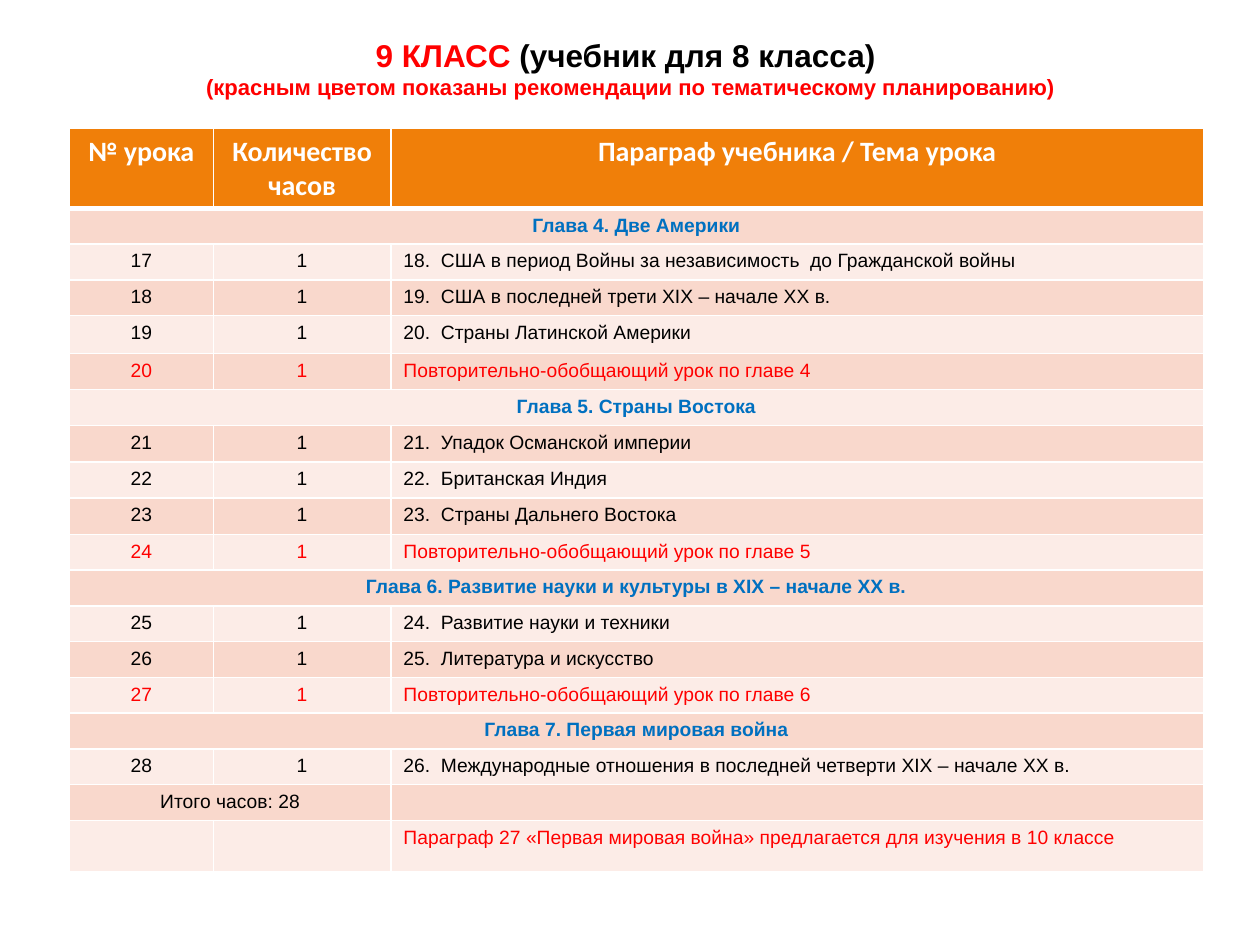
import lxml.etree
import pptx
import pptx.util
import pptx.dml.color
import pptx.enum.text
import pptx.oxml.ns

Cm = pptx.util.Cm
Pt = pptx.util.Pt
ALIGN = pptx.enum.text.PP_ALIGN

COLORS = {
    "red": "FF0000", "black": "000000", "white": "FFFFFF", "blue": "0070C0",
    "header": "F07F09", "dark_band": "F9D8CC", "light_band": "FCECE7",
}
TITLE = [
    ("9 КЛАСС ", 18, "red"),
    ("(учебник для 8 класса) ", 18, "black"),
    ("(красным цветом показаны рекомендации по тематическому планированию)", 12.6, "red"),
]
HEADER = ("№ урока", "Количество часов", "Параграф учебника / Тема урока")
FIRST_LESSON = 17
REVIEW = "Повторительно-обобщающий урок по главе"
CHAPTERS = [
    ("Глава 4. Две Америки", [
        "18.  США в период Войны за независимость  до Гражданской войны",
        "19.  США в последней трети XIX – начале XX в.",
        "20.  Страны Латинской Америки",
        f"{REVIEW} 4"]),
    ("Глава 5. Страны Востока", [
        "21.  Упадок Османской империи",
        "22.  Британская Индия",
        "23.  Страны Дальнего Востока",
        f"{REVIEW} 5"]),
    ("Глава 6. Развитие науки и культуры в XIX – начале XX в.", [
        "24.  Развитие науки и техники",
        "25.  Литература и искусство",
        f"{REVIEW} 6"]),
    ("Глава 7. Первая мировая война", [
        "26.  Международные отношения в последней четверти XIX – начале XX в."]),
]
TOTAL = "Итого часов: 28"
NOTE = "Параграф 27 «Первая мировая война» предлагается для изучения в 10 классе"
COLUMN_WIDTHS = [2.9, 3.58, 16.38]
ROW_HEIGHTS = [1.57] + [0.71] * 3 + [0.76] + [0.73] * 5 + [0.71] * 8 + [1.04]


def rgb(name):
    return pptx.dml.color.RGBColor.from_string(COLORS[name])


def style_font(font, name, size, color, bold):
    font.name = name
    font.size = Pt(size)
    font.bold = bold
    font.color.rgb = rgb(color)


def add_border(cell, side, width):
    qn = pptx.oxml.ns.qn
    properties = cell._tc.get_or_add_tcPr()
    line = lxml.etree.SubElement(properties, qn(f"a:ln{side}"), w=str(Pt(width)))
    fill = lxml.etree.SubElement(line, qn("a:solidFill"))
    lxml.etree.SubElement(fill, qn("a:srgbClr"), val=COLORS["white"])


def table_rows():
    rows = [(HEADER, "white", 1)]
    lesson = FIRST_LESSON
    for chapter, topics in CHAPTERS:
        rows.append(((chapter, "", ""), "blue", 3))
        for topic in topics:
            color = "red" if topic.startswith(REVIEW) else "black"
            rows.append(((str(lesson), "1", topic), color, 1))
            lesson += 1
    rows.append(((TOTAL, "", ""), "black", 2))
    rows.append((("", "", NOTE), "red", 1))
    return rows


def fill_cell(cell, text, row, column, color, span):
    is_header = row == 0
    for side in "LRTB":
        thick = (is_header and side == "B") or (row == 1 and side == "T")
        add_border(cell, side, 3 if thick else 1)
    band = "header" if is_header else ("dark_band" if row % 2 else "light_band")
    cell.fill.solid()
    cell.fill.fore_color.rgb = rgb(band)
    paragraph = cell.text_frame.paragraphs[0]
    if text:
        paragraph.text = text
    left_aligned = column == 2 and not is_header
    paragraph.alignment = ALIGN.LEFT if left_aligned else ALIGN.CENTER
    style_font(paragraph.font, "Calibri" if is_header else "Arial",
               16 if is_header else 11, color, is_header or span == 3)
    if not text:
        lxml.etree.SubElement(paragraph._p, pptx.oxml.ns.qn("a:endParaRPr"), sz="1100")


def add_title(slide):
    box = slide.shapes.add_textbox(Cm(1.27), Cm(0.76), Cm(22.86), Cm(1.22))
    frame = box.text_frame
    frame.word_wrap = True
    frame.vertical_anchor = pptx.enum.text.MSO_ANCHOR.MIDDLE
    paragraph = frame.paragraphs[0]
    paragraph.alignment = ALIGN.CENTER
    for index, (text, size, color) in enumerate(TITLE):
        if index == 2:
            paragraph.add_line_break()
        run = paragraph.add_run()
        run.text = text
        style_font(run.font, "Arial", size, color, True)


def add_lesson_table(slide):
    rows = table_rows()
    table = slide.shapes.add_table(
        len(rows), len(COLUMN_WIDTHS), Cm(1.4), Cm(2.59),
        Cm(sum(COLUMN_WIDTHS)), Cm(sum(ROW_HEIGHTS))).table
    table.first_row = False
    table.horz_banding = False
    for column, width in zip(table.columns, COLUMN_WIDTHS):
        column.width = Cm(width)
    for row, height in zip(table.rows, ROW_HEIGHTS):
        row.height = Cm(height)
    for row, (texts, color, span) in enumerate(rows):
        for column, text in enumerate(texts):
            fill_cell(table.cell(row, column), text, row, column, color, span)
        if span > 1:
            table.cell(row, 0).merge(table.cell(row, span - 1))


def main():
    presentation = pptx.Presentation()
    presentation.slide_width = Cm(25.4)
    presentation.slide_height = Cm(19.05)
    slide = presentation.slides.add_slide(presentation.slide_layouts[6])
    add_title(slide)
    add_lesson_table(slide)
    presentation.save("out.pptx")


if __name__ == "__main__":
    main()
